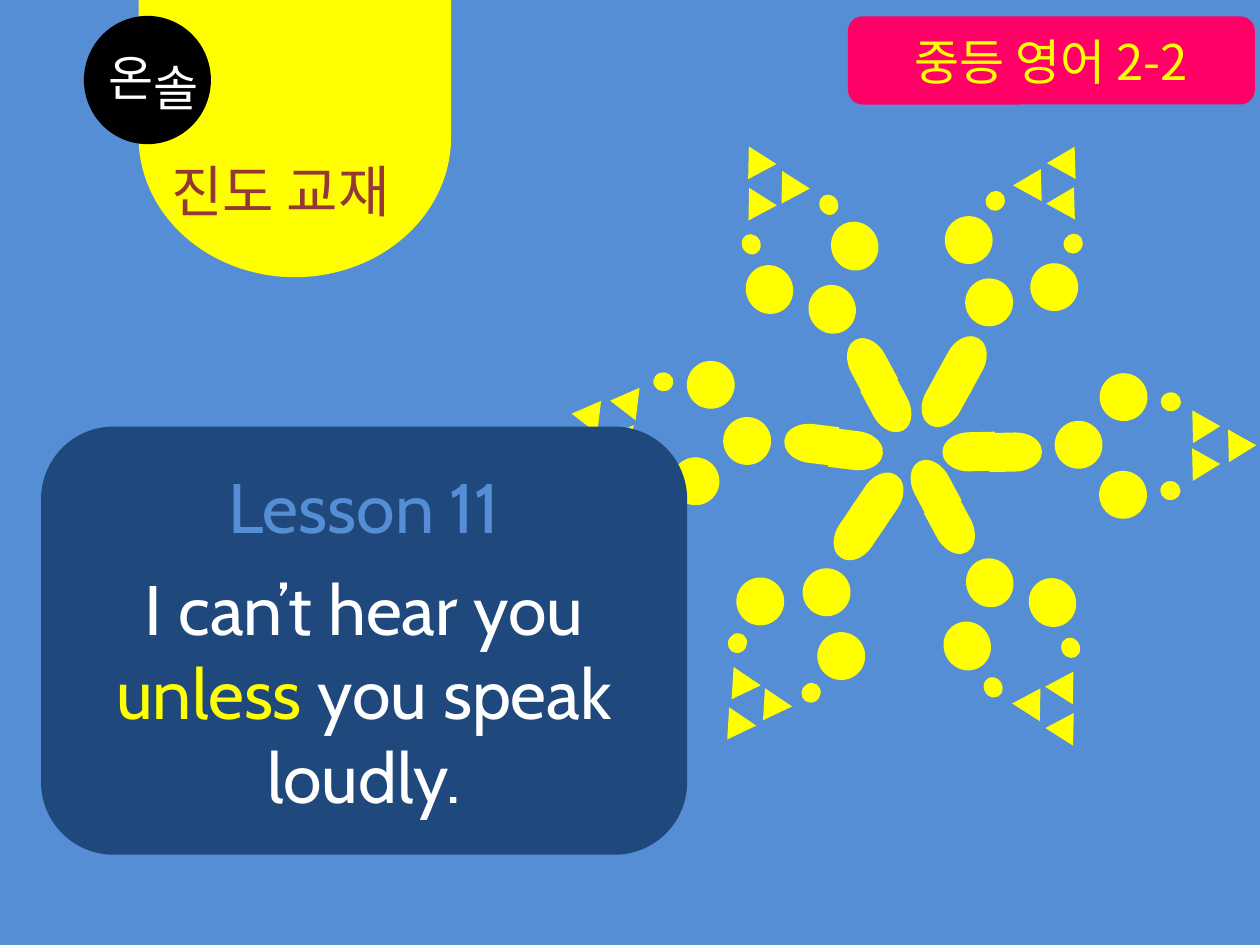
"""Build the cover slide of an English lesson with a dotted snowflake."""
from dataclasses import dataclass
from math import cos, radians, sin
from typing import Any, NamedTuple

from lxml import etree
from pptx import Presentation
from pptx.dml.color import RGBColor
from pptx.enum.shapes import MSO_SHAPE
from pptx.enum.text import MSO_ANCHOR, PP_ALIGN
from pptx.oxml.ns import qn
from pptx.util import Inches, Pt

TRI = MSO_SHAPE.ISOSCELES_TRIANGLE
OVAL = MSO_SHAPE.OVAL
HALF = MSO_SHAPE.FLOWCHART_DELAY
ROUND = MSO_SHAPE.ROUNDED_RECTANGLE
LABEL = MSO_SHAPE.FLOWCHART_ALTERNATE_PROCESS
CENTER, LEFT = PP_ALIGN.CENTER, PP_ALIGN.LEFT
MIDDLE, TOP = MSO_ANCHOR.MIDDLE, MSO_ANCHOR.TOP

WIDTH, HEIGHT = Inches(10), Inches(7.5)
CELL = WIDTH / 100


@dataclass(frozen=True)
class Theme:
    """Colours, fonts and type sizes of the slide."""
    sky: str = "558ED5"
    navy: str = "1F497D"
    pink: str = "FF0066"
    sun: str = "FFFF00"
    brown: str = "953735"
    white: str = "FFFFFF"
    black: str = "000000"
    latin: str = "Cabin"
    hangul: str = "Noto Sans CJK KR"
    small: int = 28
    medium: int = 32
    large: int = 40
    gap: int = 10
    edge: int = 2


class Box(NamedTuple):
    """Left, top, width and height in grid cells."""
    x: float
    y: float
    w: float
    h: float


class Part(NamedTuple):
    """Piece of an arm: distance out and across, size and turn."""
    kind: Any
    out: float
    side: float
    w: float
    h: float
    turn: int = 0


class Arm(NamedTuple):
    """Arm of the snowflake: hub disc, turn, bearing, stretch and part count."""
    x: float
    y: float
    turn: float
    aim: float
    long: float = 1
    wide: float = 1
    count: int = 10


class Run(NamedTuple):
    """Piece of text with its colour."""
    text: str
    color: str


THEME = Theme()
PARTS = (
    Part(TRI, 13, 0, 2.6, 2.2),
    Part(TRI, 10.15, 1.5, 2.6, 2.2),
    Part(TRI, 10.15, -1.5, 2.6, 2.2),
    Part(HALF, -8.7, 0.6, 4.2, 3.1, 90),
    Part(HALF, -5, 0.6, 4.2, 3.1, 270),
    Part(OVAL, 0, 0, 3.8, 3.8),
    Part(OVAL, 3.55, -3.8, 3.8, 3.8),
    Part(OVAL, 3.55, 3.95, 3.8, 3.8),
    Part(OVAL, 7.3, 3.6, 1.5, 1.6),
    Part(OVAL, 7.3, -3.45, 1.5, 1.6),
)
ARMS = (
    Arm(66.05, 24.55, 331.8, 333, 1.03, 0.98),
    Arm(78.55, 46.25, 151.8, 153, 1.03, 0.98),
    Arm(65.6, 47, 214, 214),
    Arm(59.3, 35, 277, 279, count=9),
    Arm(78.5, 24, 28.8, 28.8),
    Arm(85.6, 35.3, 88.7, 90.3),
)


def add_shape(shapes: Any, kind: Any, box: Box, fill: str,
              turn: float = 0, edge: int = 0) -> Any:
    """Add a flat filled shape, with an edge of the same colour if asked."""
    shape = shapes.add_shape(kind, *(round(n * CELL) for n in box))
    shape.shadow.inherit = False
    shape.rotation = turn % 360
    shape.fill.solid()
    shape.fill.fore_color.rgb = RGBColor.from_string(fill)
    if edge:
        shape.line.color.rgb = RGBColor.from_string(fill)
        shape.line.width = Pt(edge)
    else:
        shape.line.fill.background()
    return shape


def add_arm(shapes: Any, arm: Arm) -> None:
    """Draw the parts of one arm along its bearing."""
    dx, dy = sin(radians(arm.aim)), -cos(radians(arm.aim))
    for part in PARTS[:arm.count]:
        out, side = part.out * arm.long, part.side * arm.wide
        x = arm.x + out * dx - side * dy
        y = arm.y + out * dy + side * dx
        across, along = arm.wide, arm.long
        if part.turn:
            across, along = along, across
        w, h = part.w * across, part.h * along
        add_shape(shapes, part.kind, Box(x - w / 2, y - h / 2, w, h),
                  THEME.sun, arm.turn + part.turn)


def style(para: Any, size: int, face: str, align: Any) -> None:
    """Set type size, face and alignment of a paragraph."""
    para.alignment = align
    para.font.size = Pt(size)
    para.font.name = face
    base = para._p.get_or_add_pPr().get_or_add_defRPr()
    etree.SubElement(base, qn("a:ea"), typeface=THEME.hangul)


def write(shape: Any, lines: list[list[Run]], size: int, face: str,
          align: Any = CENTER, anchor: Any = MIDDLE) -> None:
    """Fill a shape with one paragraph per line."""
    frame = shape.text_frame
    frame.word_wrap = True
    frame.vertical_anchor = anchor
    for i, line in enumerate(lines):
        para = frame.add_paragraph() if i else frame.paragraphs[0]
        style(para, size, face, align)
        for piece in line:
            run = para.add_run()
            run.text = piece.text
            run.font.color.rgb = RGBColor.from_string(piece.color)


def add_text(shapes: Any, box: Box, run: Run, size: int, face: str) -> None:
    """Add a text box with one line at its top left."""
    text = shapes.add_textbox(*(round(n * CELL) for n in box))
    write(text, [[run]], size, face, LEFT, TOP)


def main() -> None:
    """Build and save the slide."""
    deck = Presentation()
    deck.slide_width, deck.slide_height = WIDTH, HEIGHT
    slide = deck.slides.add_slide(deck.slide_layouts[6])
    back = slide.background.fill
    back.solid()
    back.fore_color.rgb = RGBColor.from_string(THEME.sky)
    shapes = slide.shapes

    label = add_shape(shapes, LABEL, Box(67.3, 1.3, 32.3, 7), THEME.pink)
    write(label, [[Run("중등 영어 2-2", THEME.sun)]], THEME.small, THEME.hangul)

    flake = shapes.add_group_shape().shapes
    for arm in ARMS:
        add_arm(flake, arm)

    card = add_shape(shapes, ROUND, Box(3.4, 34, 51, 33.7), THEME.navy,
                     edge=THEME.edge)
    write(card, [
        [Run("Lesson 11", THEME.sky)],
        [Run("I can’t hear you ", THEME.white), Run("unless ", THEME.sun),
         Run("you speak", THEME.white)],
        [Run("loudly.", THEME.white)],
    ], THEME.large, THEME.latin)
    card.text_frame.paragraphs[1].space_before = Pt(THEME.gap)

    add_shape(shapes, HALF, Box(12.3, -1.5, 22.2, 24.8), THEME.sun, 90)
    add_text(shapes, Box(12.6, 11.9, 23.2, 11.8),
             Run("진도 교재", THEME.brown), THEME.medium, THEME.latin)

    badge = shapes.add_group_shape().shapes
    add_shape(badge, OVAL, Box(6.8, 1.4, 9.8, 9.9), THEME.black,
              edge=THEME.edge)
    for x, y, mark in ((7.6, 3.3, "온"), (11.2, 4.1, "솔")):
        add_text(badge, Box(x, y, 7.9, 5.7), Run(mark, THEME.white),
                 THEME.small, THEME.hangul)

    deck.save("out.pptx")


if __name__ == "__main__":
    main()
